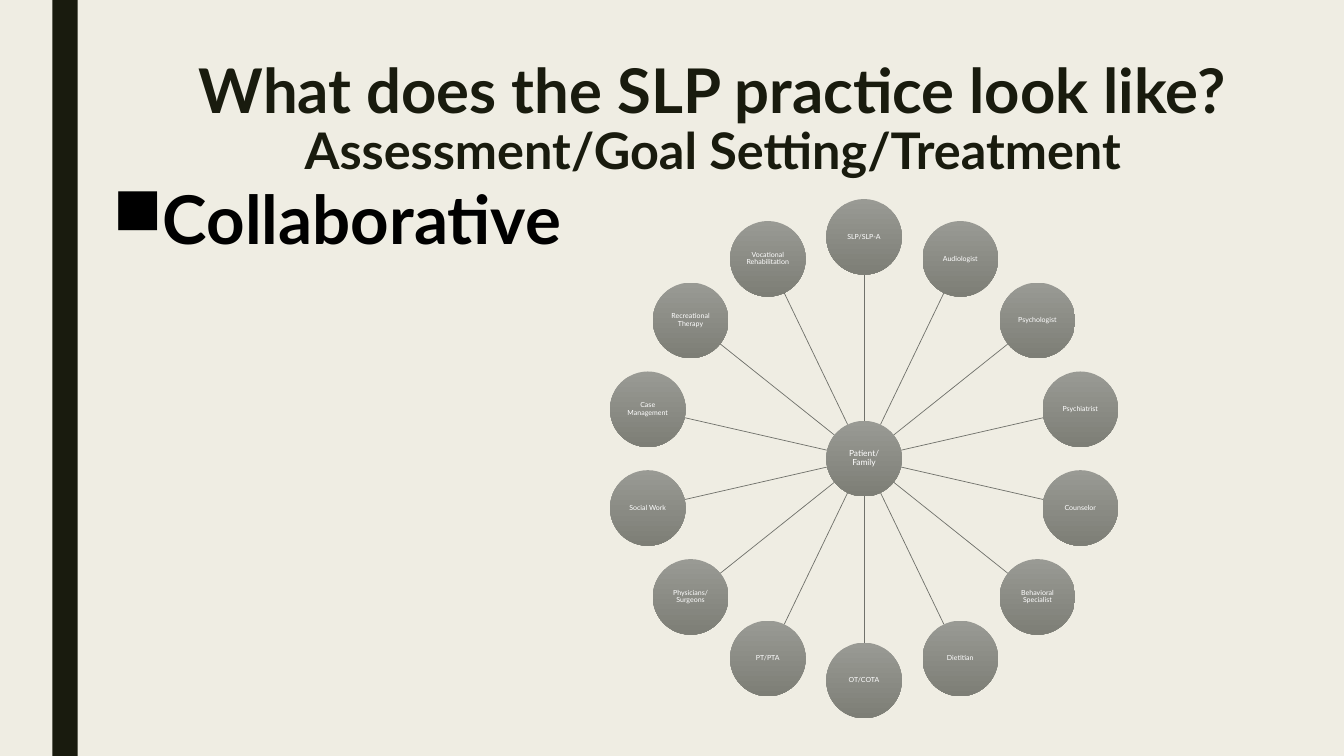
import math
import pptx
import pptx.util
import pptx.dml.color
import pptx.enum.shapes
import pptx.enum.text
import pptx.oxml
import pptx.oxml.ns

Inches, Pt = pptx.util.Inches, pptx.util.Pt
ALIGN, ANCHOR = pptx.enum.text.PP_ALIGN, pptx.enum.text.MSO_ANCHOR
COLORS = {"paper": "EFEDE3", "ink": "191B0E", "black": "000000", "white": "FFFFFF",
          "disc_top": "999A94", "disc_bottom": "7D7E76", "spoke": "70716B"}


def rgb(name):
    return pptx.dml.color.RGBColor.from_string(COLORS[name])


def add_run(p, text, size, color, bold=False):
    r = p.add_run()
    r.text = text
    r.font.name, r.font.size, r.font.bold = "Lato", Pt(size), bold
    r.font.color.rgb = rgb(color)


prs = pptx.Presentation()
prs.slide_width, prs.slide_height = Inches(13.33), Inches(7.5)
s = prs.slides.add_slide(prs.slide_layouts[5])
s.background.fill.solid()
s.background.fill.fore_color.rgb = rgb("paper")

# Side bar
bar = s.shapes.add_shape(pptx.enum.shapes.MSO_SHAPE.RECTANGLE,
                         Inches(0.52), 0, Inches(0.25), prs.slide_height)
bar.shadow.inherit = False
bar.fill.solid()
bar.fill.fore_color.rgb = rgb("ink")
bar.line.fill.background()

# Title
title = s.shapes.title
title.left, title.top, title.width, title.height = map(Inches, (0.81, 0.55, 12.52, 1.36))
tf = title.text_frame
tf.word_wrap = True
tf.auto_size = pptx.enum.text.MSO_AUTO_SIZE.NONE
tf.vertical_anchor = ANCHOR.TOP
p = tf.paragraphs[0]
p.alignment, p.line_spacing = ALIGN.CENTER, 0.89
add_run(p, "What does the SLP practice look like?", 44, "ink", True)
p.add_line_break()
add_run(p, "Assessment/Goal Setting/Treatment", 36, "ink", True)

# Bulleted keyword
tf = s.shapes.add_textbox(Inches(1.02), Inches(1.78), Inches(5), Inches(1)).text_frame
tf.word_wrap = True
p = tf.paragraphs[0]
p.line_spacing = 0.94
pPr = p._p.get_or_add_pPr()
pPr.set("marL", str(Inches(0.42)))
pPr.set("indent", str(-Inches(0.42)))
bullet = pptx.oxml.parse_xml('<a:buChar %s char="■"/>' % pptx.oxml.ns.nsdecls("a"))
pPr.append(bullet)
add_run(p, "Collaborative", 48, "black", True)

# Wheel: the hub, then the team clockwise from the top
TEAM = ["SLP/SLP-A", "Audiologist", "Psychologist", "Psychiatrist", "Counselor",
        "Behavioral Specialist", "Dietitian", "OT/COTA", "PT/PTA",
        "Physicians/Surgeons", "Social Work", "Case Management",
        "Recreational Therapy", "Vocational Rehabilitation"]
HUB_X, HUB_Y, ORBIT, DISC = 8.57, 4.55, 2.2, 0.75

discs = [("Patient/Family", 6, 0, 0)]
for i, member in enumerate(TEAM):
    angle = 2 * math.pi * i / len(TEAM)
    dx, dy = math.sin(angle), -math.cos(angle)
    discs.append((member, 5, ORBIT * dx, ORBIT * dy))

    # Spoke from the hub's rim to the member's rim
    near, far = DISC / 2, ORBIT - DISC / 2
    spoke = s.shapes.add_connector(
        pptx.enum.shapes.MSO_CONNECTOR.STRAIGHT,
        Inches(HUB_X + near * dx), Inches(HUB_Y + near * dy),
        Inches(HUB_X + far * dx), Inches(HUB_Y + far * dy))
    spoke.line.color.rgb = rgb("spoke")
    spoke.line.width = Pt(0.5)
    spoke._element.spPr.append(
        pptx.oxml.parse_xml("<a:effectLst %s/>" % pptx.oxml.ns.nsdecls("a")))

for label, size, dx, dy in discs:
    sp = s.shapes.add_shape(pptx.enum.shapes.MSO_SHAPE.OVAL,
                            Inches(HUB_X + dx - DISC / 2), Inches(HUB_Y + dy - DISC / 2),
                            Inches(DISC), Inches(DISC))
    sp.shadow.inherit = False
    sp.line.fill.background()
    sp.fill.gradient()
    sp.fill.gradient_angle = 270
    for stop, color in zip(sp.fill.gradient_stops, ("disc_top", "disc_bottom")):
        stop.color.rgb = rgb(color)
    tf = sp.text_frame
    tf.word_wrap = True
    tf.vertical_anchor = ANCHOR.MIDDLE
    tf.margin_left = tf.margin_top = tf.margin_right = tf.margin_bottom = 0
    p = tf.paragraphs[0]
    p.alignment, p.line_spacing = ALIGN.CENTER, 0.9
    add_run(p, label, size, "white")

prs.save("out.pptx")
